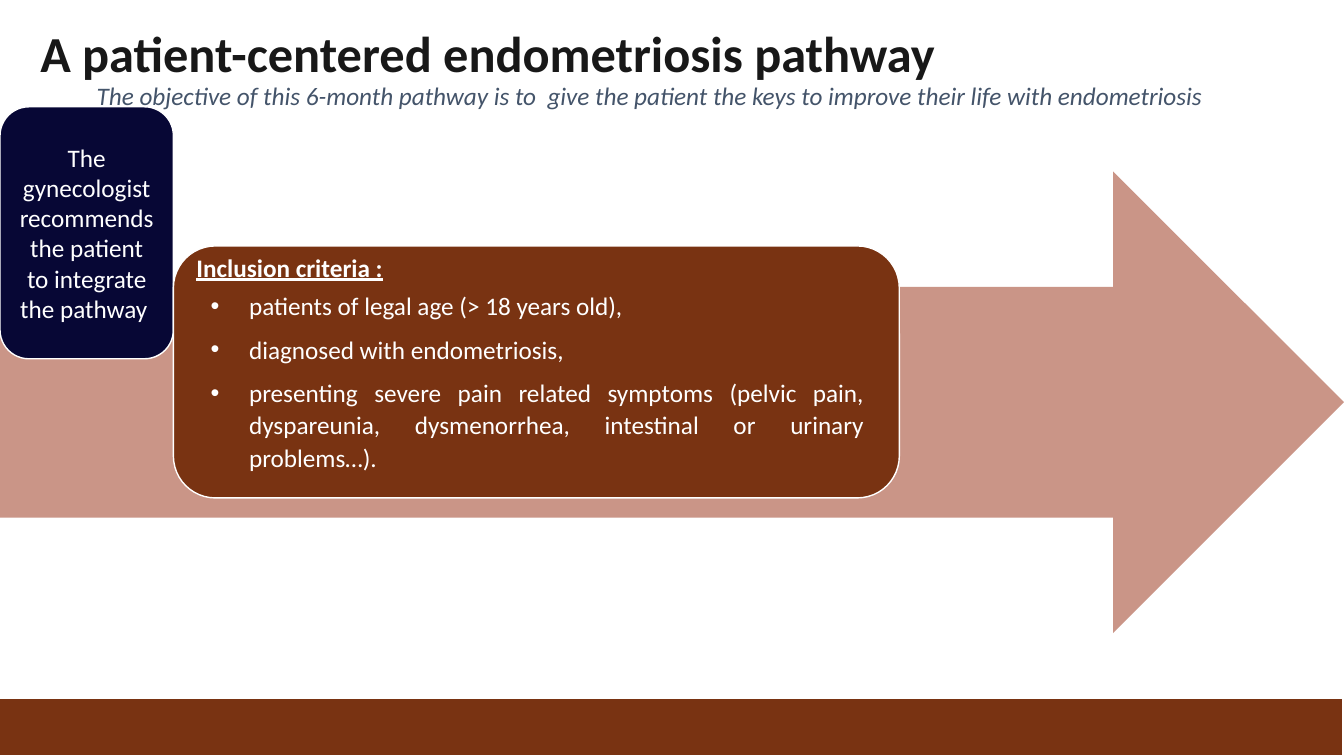
from lxml import etree
from pptx import Presentation
from pptx.dml.color import RGBColor
from pptx.enum.shapes import MSO_SHAPE as Shape
from pptx.enum.text import MSO_ANCHOR as Anchor, MSO_AUTO_SIZE as AutoSize, PP_ALIGN as Align
from pptx.oxml.ns import qn
from pptx.util import Inches, Pt

TITLE = "A patient-centered endometriosis pathway"
OBJECTIVE = ("The objective of this 6-month pathway is to  give the patient "
             "the keys to improve their life with endometriosis")
REFERRAL = "The gynecologist recommends the patient to integrate the pathway "
CRITERIA_HEADING = "Inclusion criteria :"
CRITERIA = [
    "patients of legal age (> 18 years old),",
    "diagnosed with endometriosis,",
    "presenting severe pain related symptoms (pelvic pain, dyspareunia, "
    "dysmenorrhea, intestinal or urinary problems…).",
]

WHITE = RGBColor(0xFF, 0xFF, 0xFF)
BROWN = RGBColor(0x79, 0x33, 0x12)
ROSE = RGBColor(0xCA, 0x95, 0x87)
NAVY = RGBColor(0x07, 0x07, 0x35)
SLATE = RGBColor(0x44, 0x54, 0x6A)
INK = RGBColor(0x18, 0x18, 0x18)

WIDTH, HEIGHT = 13.33, 7.5
FOOTER_HEIGHT = 0.57
REFERRAL_WIDTH, BOX_HEIGHT = 1.72, 2.5


def place(shape, left, top, width, height):
    shape.left, shape.top = Inches(left), Inches(top)
    shape.width, shape.height = Inches(width), Inches(height)


def write(shape, *lines, size=18, color=WHITE, bold=False, italic=False,
          underline=False, align=Align.LEFT, anchor=Anchor.TOP, spacing=1.0, gap=0):
    """Fill a shape with one paragraph per line; gap is the space between them."""
    frame = shape.text_frame
    frame.word_wrap = True
    frame.auto_size = AutoSize.NONE
    frame.vertical_anchor = anchor
    for index, line in enumerate(lines):
        para = frame.add_paragraph() if index else frame.paragraphs[0]
        para.alignment = align
        para.line_spacing = spacing
        para.space_before = Pt(gap if index else 0)
        span = para.add_run()
        span.text = line
        font = span.font
        font.name, font.size, font.color.rgb = "Calibri", Pt(size), color
        font.bold, font.italic, font.underline = bold, italic, underline


def add_block(page, kind, box, fill, outlined=True):
    block = page.shapes.add_shape(kind, *map(Inches, box))
    block.shadow.inherit = False
    block.fill.solid()
    block.fill.fore_color.rgb = fill
    if outlined:
        block.line.color.rgb = WHITE
        block.line.width = Pt(1)
    else:
        block.line.fill.background()
    return block


def add_label(page, box, text, **style):
    label = page.shapes.add_textbox(*map(Inches, box))
    write(label, text, **style)


def add_bullets(shape, indent, color):
    for para in shape.text_frame.paragraphs:
        properties = para._p.get_or_add_pPr()
        properties.set("marL", str(Inches(indent)))
        properties.set("indent", str(-Inches(indent)))
        bullet_color = etree.SubElement(properties, qn("a:buClr"))
        etree.SubElement(bullet_color, qn("a:srgbClr"), val=str(color))
        etree.SubElement(properties, qn("a:buFont"), typeface="Arial")
        etree.SubElement(properties, qn("a:buChar"), char="•")


def bring_to_front(page, shape):
    page.shapes._spTree.append(shape._element)


def main():
    deck = Presentation()
    deck.slide_width, deck.slide_height = Inches(WIDTH), Inches(HEIGHT)
    page = deck.slides.add_slide(deck.slide_layouts[1])
    title, criteria = page.placeholders

    add_block(page, Shape.RECTANGLE,
              (-0.01, HEIGHT - FOOTER_HEIGHT, WIDTH, FOOTER_HEIGHT), BROWN)
    add_block(page, Shape.RIGHT_ARROW, (0, 1.7, WIDTH, 4.58), ROSE, outlined=False)
    referral = add_block(page, Shape.ROUNDED_RECTANGLE,
                         (0, 1.06, REFERRAL_WIDTH, BOX_HEIGHT), NAVY)
    write(referral, REFERRAL, align=Align.CENTER, anchor=Anchor.MIDDLE)
    add_label(page, (0.86, 0.75, 12.19, 0.4), OBJECTIVE, color=SLATE, italic=True)
    add_block(page, Shape.ROUNDED_RECTANGLE,
              (REFERRAL_WIDTH, 2.44, 7.2, BOX_HEIGHT), BROWN)

    place(criteria, 1.99, 2.81, 6.68, 1.93)
    write(criteria, *CRITERIA, align=Align.JUSTIFY, spacing=1.07, gap=8)
    add_bullets(criteria, 0.38, WHITE)
    bring_to_front(page, criteria)
    add_label(page, (1.85, 2.45, 2.06, 0.4), CRITERIA_HEADING, bold=True, underline=True)

    place(title, 0.3, 0.24, 11.5, 0.75)
    write(title, TITLE, size=36, color=INK, bold=True, spacing=0.9)
    bring_to_front(page, title)

    deck.save("out.pptx")


if __name__ == "__main__":
    main()
